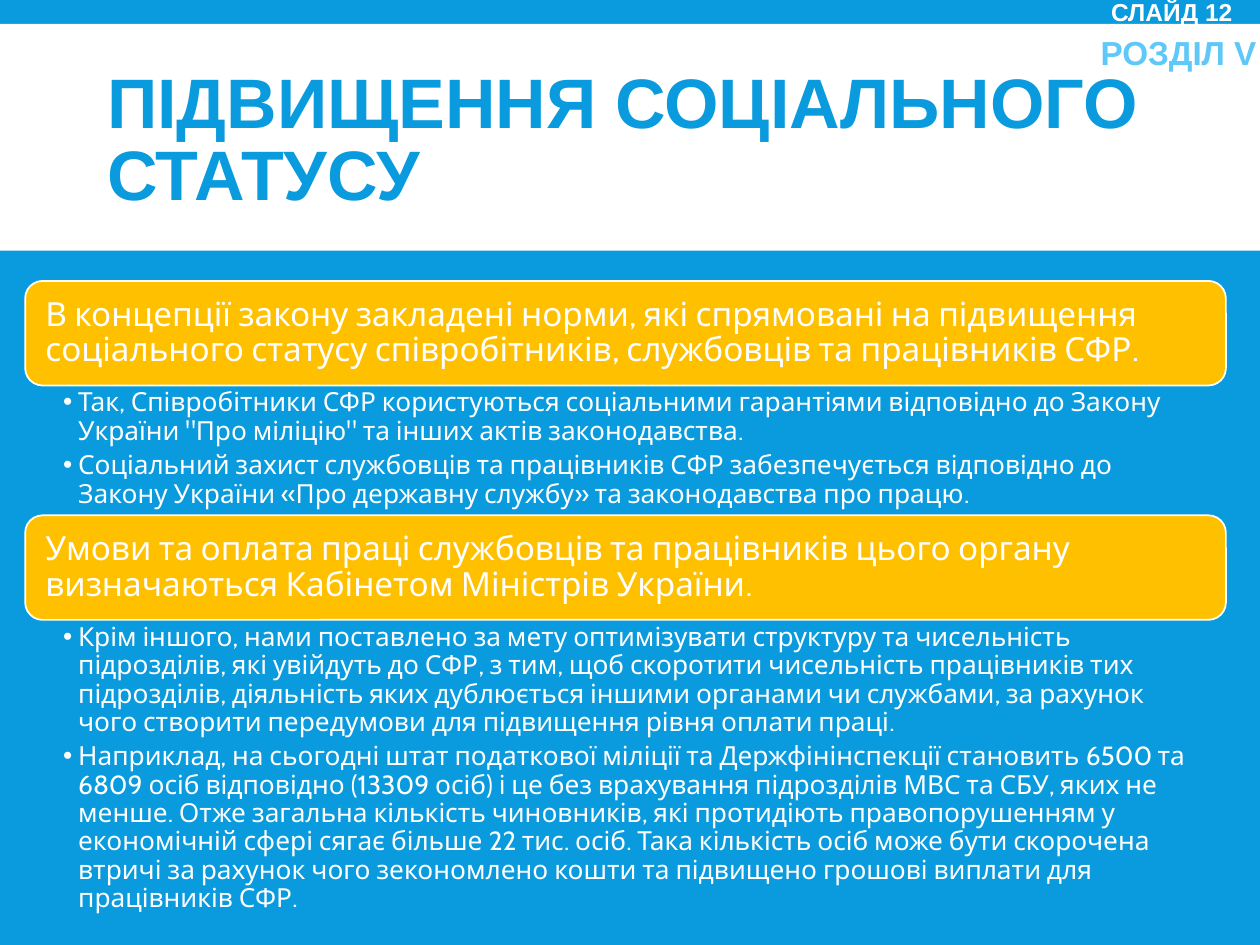
from dataclasses import dataclass

from lxml import etree
from pptx import Presentation
from pptx.dml.color import RGBColor
from pptx.enum import shapes, text
from pptx.oxml import ns
from pptx.util import Inches, Pt

BLUE = RGBColor(0x09, 0x9B, 0xDD)
LIGHT_BLUE = RGBColor(0x5E, 0xC8, 0xF8)
AMBER = RGBColor(0xFF, 0xC0, 0x00)
WHITE = RGBColor(0xFF, 0xFF, 0xFF)

LEFT, WIDTH, HEADING_HEIGHT = 0.2, 9.53, 0.83
SECTIONS_TOP = 2.23


@dataclass
class Section:
    heading: str
    points: list[str]
    list_height: float


@dataclass
class Label:
    words: str
    left: float
    top: float
    size: float
    color: RGBColor
    spacing: float


SECTIONS = [
    Section(
        "В концепції закону закладені норми, які спрямовані на підвищення соціального "
        "статусу співробітників, службовців та працівників СФР.",
        [
            "Так, Співробітники СФР користуються соціальними гарантіями відповідно до "
            "Закону України \"Про міліцію\" та інших актів законодавства.",
            "Соціальний захист службовців та працівників СФР забезпечується відповідно до "
            "Закону України «Про державну службу» та законодавства про працю.",
        ],
        1.03,
    ),
    Section(
        "Умови та оплата праці службовців та працівників цього органу визначаються "
        "Кабінетом Міністрів України.",
        [
            "Крім іншого, нами поставлено за мету оптимізувати структуру та чисельність "
            "підрозділів, які увійдуть до СФР, з тим, щоб скоротити чисельність працівників "
            "тих підрозділів, діяльність яких дублюється іншими органами чи службами, за "
            "рахунок чого створити передумови для підвищення рівня оплати праці.",
            "Наприклад, на сьогодні штат податкової міліції та Держфінінспекції становить "
            "6500 та 6809 осіб відповідно (13309 осіб) і це без врахування підрозділів МВС "
            "та СБУ, яких не менше. Отже загальна кількість чиновників, які протидіють "
            "правопорушенням у економічній сфері сягає більше 22 тис. осіб. Така кількість "
            "осіб може бути скорочена втричі за рахунок чого зекономлено кошти та підвищено "
            "грошові виплати для працівників СФР.",
        ],
        2.19,
    ),
]
LABELS = [
    Label("РОЗДІЛ V", 8.49, 0.2, 19, LIGHT_BLUE, 0.65),
    Label("СЛАЙД 12", 8.3, -0.15, 14, WHITE, 0.85),
]


def place(shape, left: float, top: float, width: float, height: float) -> None:
    shape.left, shape.top = Inches(left), Inches(top)
    shape.width, shape.height = Inches(width), Inches(height)


def set_margins(frame, left: float, top: float, right: float, bottom: float) -> None:
    frame.margin_left, frame.margin_top = Inches(left), Inches(top)
    frame.margin_right, frame.margin_bottom = Inches(right), Inches(bottom)


def write(frame, lines: list[str], font: str, size: float, color: RGBColor,
          spacing: float, bold: bool = False, align=text.PP_ALIGN.LEFT,
          anchor=text.MSO_ANCHOR.MIDDLE) -> None:
    """Fill a text frame with one paragraph per line, all in one format."""
    frame.text = "\n".join(lines)
    frame.word_wrap = True
    frame.auto_size = text.MSO_AUTO_SIZE.NONE
    frame.vertical_anchor = anchor
    for para in frame.paragraphs:
        para.alignment = align
        para.line_spacing = spacing
        para.space_before = Pt(0)
        for span in para.runs:
            span.font.name, span.font.size = font, Pt(size)
            span.font.bold, span.font.color.rgb = bold, color


def add_box(slide, kind, left: float, top: float, width: float, height: float,
            fill: RGBColor):
    box = slide.shapes.add_shape(kind, Inches(left), Inches(top),
                                 Inches(width), Inches(height))
    box.shadow.inherit = False
    box.fill.solid()
    box.fill.fore_color.rgb = fill
    box.line.fill.background()
    return box


def add_heading(slide, words: str, top: float) -> None:
    box = add_box(slide, shapes.MSO_SHAPE.ROUNDED_RECTANGLE,
                  LEFT, top, WIDTH, HEADING_HEIGHT, AMBER)
    box.line.fill.solid()
    box.line.color.rgb, box.line.width = WHITE, Pt(1)
    set_margins(box.text_frame, 0.12, 0.12, 0.12, 0.12)
    write(box.text_frame, [words], "Cabin", 19, WHITE, 0.9)


def fill_list(body, points: list[str], top: float, height: float) -> None:
    place(body, LEFT, top, WIDTH, height)
    set_margins(body.text_frame, 0.3, 0.03, 0.15, 0.03)
    write(body.text_frame, points, "Cabin", 15, WHITE, 0.9,
          anchor=text.MSO_ANCHOR.TOP)
    for para in body.text_frame.paragraphs:
        para.level = 1
        para.space_after = Pt(3.4)
        properties = para._p.get_or_add_pPr()
        properties.set("marL", str(Inches(0.12)))
        properties.set("indent", str(-Inches(0.12)))
        etree.SubElement(properties, ns.qn("a:buFont")).set("typeface", "Arial")
        etree.SubElement(properties, ns.qn("a:buChar")).set("char", "•")


def add_label(slide, label: Label) -> None:
    box = slide.shapes.add_textbox(Inches(label.left), Inches(label.top),
                                   Inches(1.58), Inches(0.52))
    write(box.text_frame, [label.words], "Arial", label.size, label.color,
          label.spacing, bold=True, align=text.PP_ALIGN.RIGHT)


def main() -> None:
    deck = Presentation()
    deck.slide_width, deck.slide_height = Inches(10), Inches(7.5)
    slide = deck.slides.add_slide(deck.slide_layouts.get_by_name("Two Content"))
    slide.background.fill.solid()
    slide.background.fill.fore_color.rgb = BLUE

    band = add_box(slide, shapes.MSO_SHAPE.RECTANGLE, 0, 0.19, 10, 1.8, WHITE)
    slide.shapes._spTree.insert(2, band._element)  # behind the title

    title = slide.shapes.title
    place(title, 0.75, 0.31, 8.5, 1.65)
    write(title.text_frame, ["ПІДВИЩЕННЯ СОЦІАЛЬНОГО СТАТУСУ"], "Arial", 40, BLUE,
          0.85, bold=True)

    top = SECTIONS_TOP
    for index, section in enumerate(SECTIONS, start=1):
        add_heading(slide, section.heading, top)
        top += HEADING_HEIGHT
        fill_list(slide.placeholders[index], section.points, top, section.list_height)
        top += section.list_height

    for label in LABELS:
        add_label(slide, label)
    deck.save("out.pptx")


if __name__ == "__main__":
    main()
